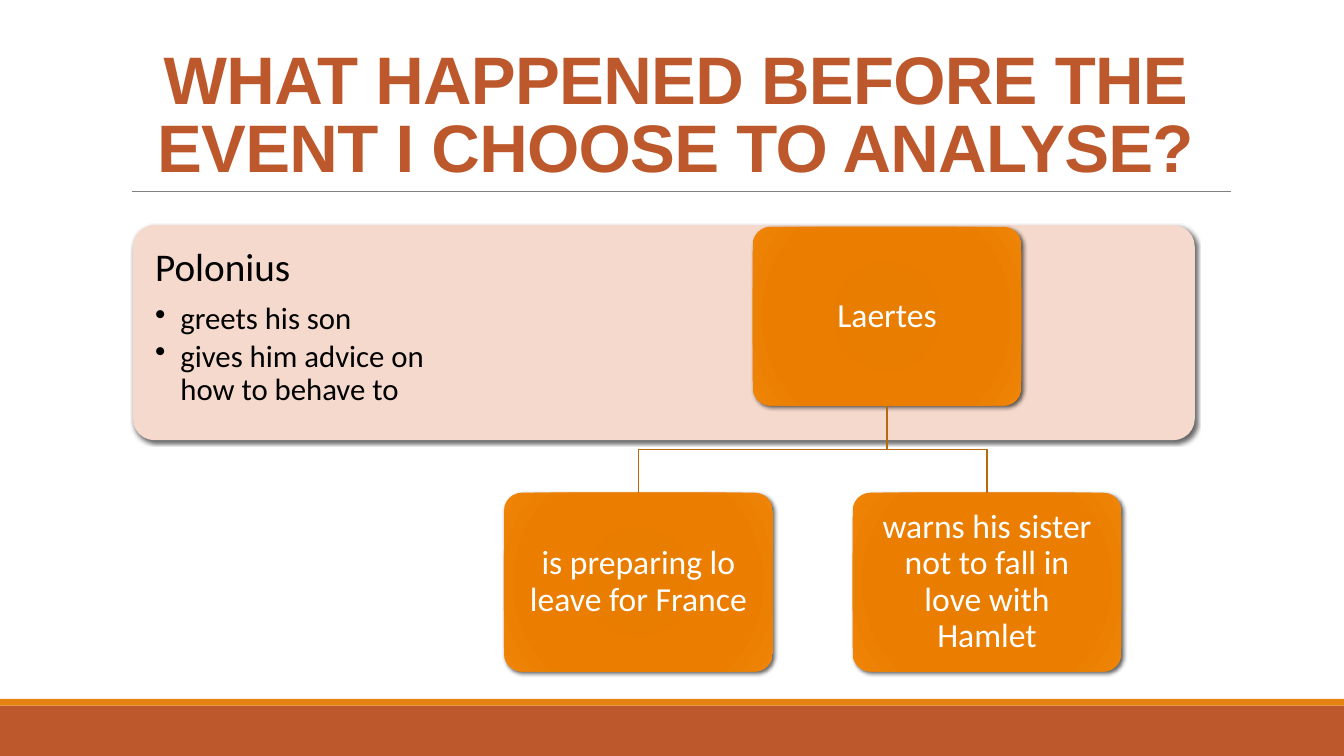
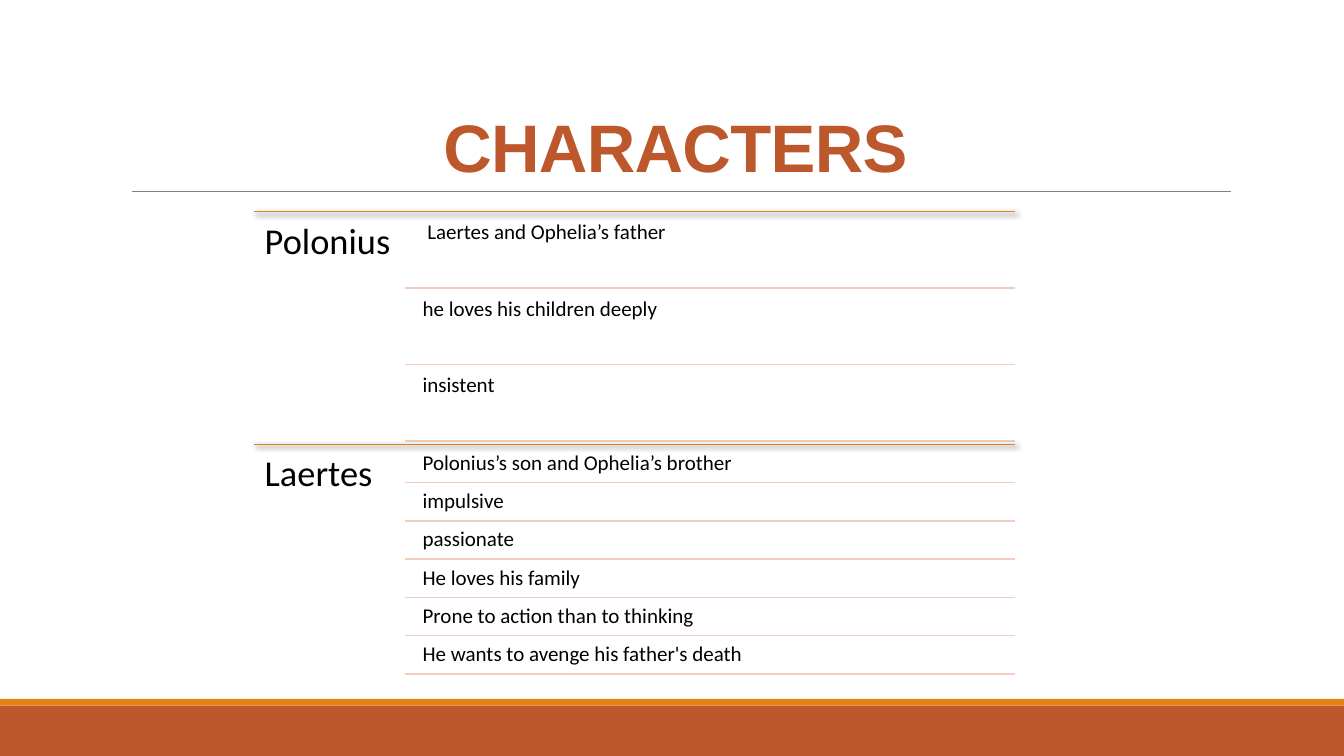
from lxml.etree import SubElement
from pptx import Presentation
from pptx.dml.color import RGBColor
from pptx.enum.shapes import MSO_CONNECTOR, MSO_SHAPE
from pptx.enum.text import MSO_ANCHOR, PP_ALIGN
from pptx.oxml.ns import qn
from pptx.util import Inches, Pt

RUST = RGBColor(0xBD, 0x58, 0x2C)
AMBER = RGBColor(0xE4, 0x83, 0x12)
BROWN = RGBColor(0xB7, 0x69, 0x0E)
ROSE = RGBColor(0xF5, 0xD9, 0xCC)
BLUSH = RGBColor(0xF2, 0xCD, 0xBD)
GREY = RGBColor(0x80, 0x80, 0x80)
BLACK = RGBColor(0, 0, 0)
WHITE = RGBColor(0xFF, 0xFF, 0xFF)
GLOW = ((0, "E57B00"), (34, "E87D00"), (70, "EB7E00"), (100, "EF8407"))
COLS, ROWS = 80, 45


class Deck:
    """Holds the style and the current slide; lengths are grid cells."""

    def __init__(self):
        self.show = Presentation()
        self.show.slide_width = Inches(13.333)
        self.show.slide_height = Inches(7.5)
        self.col = self.show.slide_width / COLS
        self.row = self.show.slide_height / ROWS

    def spot(self, x, y):
        return round(x * self.col), round(y * self.row)

    def page(self, title):
        """Start a slide with its bands, rule and title."""
        layout = self.show.slide_layouts[6]
        self.shapes = self.show.slides.add_slide(layout).shapes
        for y, tall, color in ((42, 3, RUST), (41.6, 0.4, AMBER)):
            self.block(MSO_SHAPE.RECTANGLE, 0, y, COLS, tall, color)
        self.rule(7.85, 73.25, 11.4, GREY, 0.5)
        box = self.text(7.2, 1.85, 66, 9.55, [title], 48, RUST, 0.05)
        frame = box.text_frame
        frame.vertical_anchor = MSO_ANCHOR.BOTTOM
        para = frame.paragraphs[0]
        para.alignment = PP_ALIGN.CENTER
        para.line_spacing = 0.85
        run = para.runs[0]
        run.font.name = "Arial"
        run.font.bold = True
        run._r.get_or_add_rPr().set("spc", "-50")

    def shade(self, props, blur=3):
        """Give shape properties a soft shadow to the lower right."""
        glow = SubElement(props.find(qn("a:effectLst")), qn("a:outerShdw"),
                          blurRad=str(Pt(blur)), dist=str(Pt(2)),
                          dir="2700000", algn="ctr", rotWithShape="0")
        tint = SubElement(glow, qn("a:srgbClr"), val="000000")
        SubElement(tint, qn("a:alpha"), val="60000")

    def block(self, kind, x, y, wide, tall, color):
        shape = self.shapes.add_shape(kind, *self.spot(x, y),
                                      *self.spot(wide, tall))
        shape.fill.solid()
        shape.fill.fore_color.rgb = color
        shape.line.fill.background()
        shape.shadow.inherit = False
        return shape

    def card(self, x, y, wide, tall, color):
        card = self.block(MSO_SHAPE.ROUNDED_RECTANGLE, x, y, wide, tall, color)
        card.adjustments[0] = 0.1
        self.shade(card._element.spPr)
        return card

    def node(self, x, y, words):
        """A glowing card with a centred label."""
        card = self.card(x, y, 16, 10.65, AMBER)
        card.fill.gradient()
        grad = card._element.spPr.find(qn("a:gradFill"))
        for child in list(grad):
            grad.remove(child)
        stops = SubElement(grad, qn("a:gsLst"))
        for share, color in GLOW:
            stop = SubElement(stops, qn("a:gs"), pos=str(share * 1000))
            SubElement(stop, qn("a:srgbClr"), val=color)
        route = SubElement(grad, qn("a:path"), path="circle")
        SubElement(route, qn("a:fillToRect"),
                   {side: "100000" for side in "ltrb"})
        self.label(card.text_frame, [words], 24, WHITE, 0.15)
        card.text_frame.vertical_anchor = MSO_ANCHOR.MIDDLE
        card.text_frame.paragraphs[0].alignment = PP_ALIGN.CENTER
        return card

    def link(self, top, low):
        """A bent line from the foot of one card to the head of another."""
        start = top.left + top.width // 2, top.top + top.height
        end = low.left + low.width // 2, low.top
        mid = (start[1] + end[1]) // 2
        pen = self.shapes.build_freeform(*start)
        pen.add_line_segments([(start[0], mid), (end[0], mid), end],
                              close=False)
        bend = pen.convert_to_shape()
        bend.fill.background()
        bend.line.color.rgb = BROWN
        bend.line.width = Pt(1)
        bend.shadow.inherit = False

    def rule(self, left, right, y, color, width=1, shade=False):
        line = self.shapes.add_connector(
            MSO_CONNECTOR.STRAIGHT, *self.spot(left, y), *self.spot(right, y))
        line.line.color.rgb = color
        line.line.width = Pt(width)
        props = line._element.spPr
        SubElement(props, qn("a:effectLst"))
        if shade:
            self.shade(props, 3.5)

    def text(self, x, y, wide, tall, lines, size, color, pad):
        box = self.shapes.add_textbox(*self.spot(x, y), *self.spot(wide, tall))
        self.label(box.text_frame, lines, size, color, pad)
        return box

    def label(self, frame, lines, size, color, pad):
        """First line plain, any further lines as smaller bullets."""
        frame.word_wrap = True
        frame.margin_left = frame.margin_right = Inches(pad)
        frame.margin_top = frame.margin_bottom = Inches(pad)
        frame.text = "\n".join(lines)
        for i, para in enumerate(frame.paragraphs):
            points, after = (22, 3) if i else (size, size * 0.35)
            if i:
                props = para._p.get_or_add_pPr()
                props.set("marL", str(Inches(0.25)))
                props.set("indent", str(-Inches(0.25)))
                SubElement(props, qn("a:buChar"), char="•")
            para.alignment = PP_ALIGN.LEFT
            para.line_spacing = 0.9
            para.space_after = Pt(after)
            for run in para.runs:
                run.font.name = "Calibri"
                run.font.size = Pt(points)
                run.font.color.rgb = color

    def group(self, y, name, notes):
        """A name on the left and evenly ruled notes on the right."""
        left, inner, right = 15.1, 24.1, 60.4
        self.rule(left, right, y, AMBER, shade=True)
        self.text(left, y, inner - left, 13.8, [name], 26, BLACK, 0.11)
        pitch = 13.66 / len(notes)
        gap = pitch * 0.05
        for i, note in enumerate(notes):
            top = y + i * pitch
            self.text(inner + 0.7, top + gap, 35.6, pitch - gap, [note],
                      15, BLACK, 0.06)
            self.rule(inner, right, top + pitch, BLUSH)


def main():
    deck = Deck()

    # Events before the scene
    deck.page("WHAT HAPPENED BEFORE THE EVENT I CHOOSE TO ANALYSE?")
    deck.card(7.92, 13.4, 63.2, 12.8, ROSE)
    deck.text(7.92, 13.4, 18.96, 12.8,
              ["Polonius", "greets his son",
               "gives him advice on how to behave to"], 28, BLACK, 0.22)
    son = deck.node(44.8, 13.5, "Laertes")
    for x, words in ((30, "is preparing lo leave for France"),
                     (50.75, "warns his sister not to fall in love with Hamlet")):
        deck.link(son, deck.node(x, 29.33, words))

    # Traits of the two men
    deck.page("CHARACTERS")
    deck.group(12.6, "Polonius", [
        " Laertes and Ophelia’s father", "he loves his children deeply",
        "insistent"])
    deck.group(26.45, "Laertes", [
        "Polonius’s son and Ophelia’s brother", "impulsive", "passionate",
        "He loves his family", "Prone to action than to thinking",
        "He wants to avenge his father's death"])

    deck.show.save("out.pptx")


if __name__ == "__main__":
    main()
